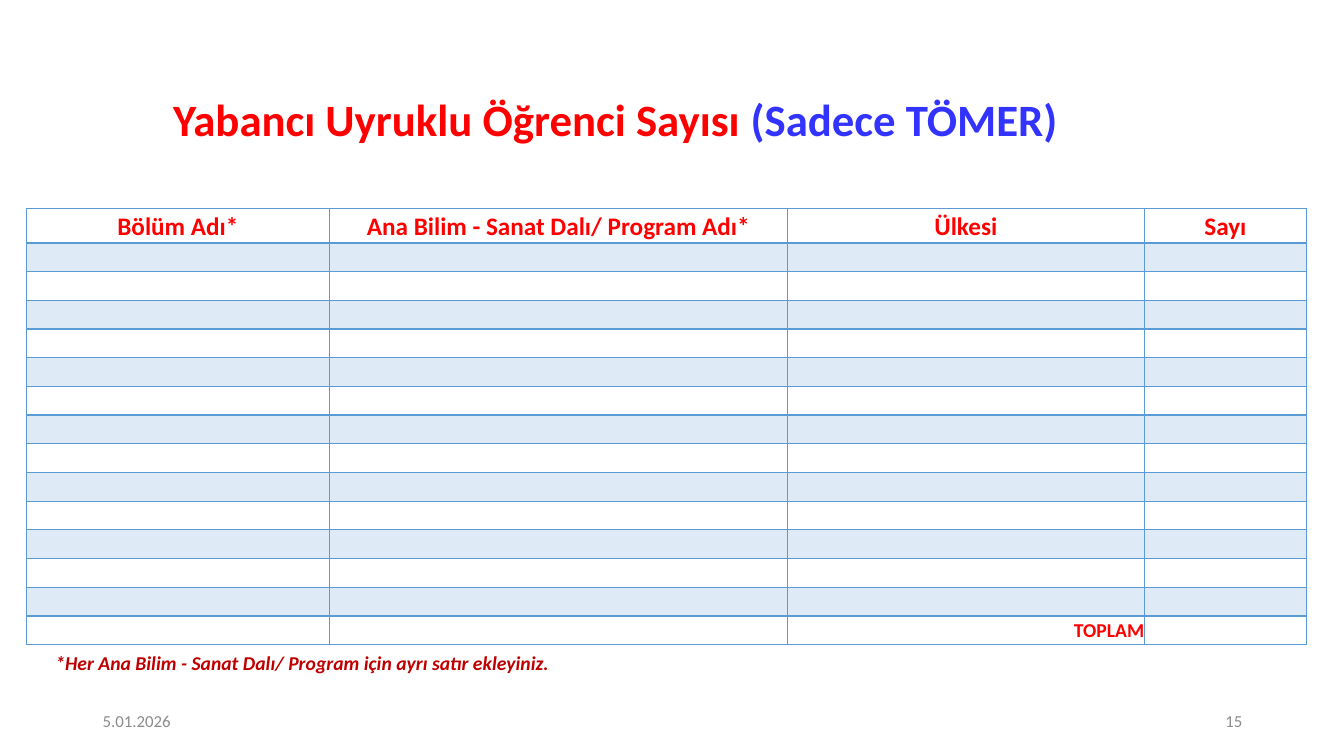
from lxml.etree import SubElement
from pptx import Presentation
from pptx.dml.color import RGBColor
from pptx.enum.text import MSO_ANCHOR, MSO_AUTO_SIZE, PP_ALIGN
from pptx.oxml.ns import qn
from pptx.util import Inches, Pt

WIDE, HIGH = 13.33, 7.5
RED, BLUE, GREY, DARK = "FF0000", "3333FF", "8C8C8C", "C00000"
EDGE, BAND = "5B9BD5", "DEEBF7"

TITLE = [("Yabancı Uyruklu Öğrenci Sayısı ", RED), ("(Sadece TÖMER) ", BLUE)]
HEADS = ["Bölüm Adı*", "Ana Bilim - Sanat Dalı/ Program Adı*", "Ülkesi", "Sayı"]
COLS = [3.01, 4.54, 3.54, 1.61]
ROWS = [0.34] + [0.285] * 14
TOTAL = "\u00a0TOPLAM"
NOTE = "*Her Ana Bilim - Sanat Dalı/ Program için ayrı satır ekleyiniz."
DATE, PAGE = "5.01.2026", "15"
LEFT, TOP = 0.26, 2.07
FOOT = (0.95 - 0.02) * HIGH


def color(code):
    return RGBColor.from_string(code)


def style(font, size, code, bold=False, italic=False):
    font.name, font.size = "Calibri", Pt(size)
    font.bold, font.italic = bold, italic
    font.color.rgb = color(code)


def label(slide, box, text, size, code, align=PP_ALIGN.LEFT,
          anchor=MSO_ANCHOR.MIDDLE, strong=False):
    frame = slide.shapes.add_textbox(*map(Inches, box)).text_frame
    frame.word_wrap = True
    frame.vertical_anchor = anchor
    par = frame.paragraphs[0]
    par.text, par.alignment = text, align
    style(par.font, size, code, strong, strong)


def border(cell, head):
    props = cell._tc.get_or_add_tcPr()
    for side in "LRTB":
        width = 2 if head and side == "B" else 1
        line = SubElement(props, qn(f"a:ln{side}"), w=str(Pt(width)))
        fill = SubElement(line, qn("a:solidFill"))
        SubElement(fill, qn("a:srgbClr"), val=EDGE)


def write(cell, text, size, align):
    cell.vertical_anchor = MSO_ANCHOR.MIDDLE
    cell.margin_left = cell.margin_right = 0
    cell.margin_top = cell.margin_bottom = 0
    par = cell.text_frame.paragraphs[0]
    par.text, par.alignment, par.line_spacing = text, align, 1.07
    style(par.font, size, RED, True)


def heading(slide):
    title = slide.shapes.title
    title.left, title.top, title.width, title.height = map(
        Inches, (0.52, 0.93, 11.27, 0.56))
    frame = title.text_frame
    frame.auto_size = MSO_AUTO_SIZE.NONE
    frame.word_wrap = True
    frame.vertical_anchor = MSO_ANCHOR.MIDDLE
    par = frame.paragraphs[0]
    par.alignment, par.line_spacing = PP_ALIGN.CENTER, 0.9
    for text, code in TITLE:
        run = par.add_run()
        run.text = text
        style(run.font, 32, code, True)


def grid(slide):
    table = slide.shapes.add_table(
        len(ROWS), len(COLS), Inches(LEFT), Inches(TOP),
        Inches(sum(COLS)), Inches(sum(ROWS))).table
    table.first_row = table.horz_banding = False
    for col, width in zip(table.columns, COLS):
        col.width = Inches(width)
    for r, high in enumerate(ROWS):
        table.rows[r].height = Inches(high)
        for c, head in enumerate(HEADS):
            cell = table.cell(r, c)
            border(cell, r == 0)
            if r % 2:
                cell.fill.solid()
                cell.fill.fore_color.rgb = color(BAND)
            else:
                cell.fill.background()
            if r == 0:
                write(cell, head, 18, PP_ALIGN.CENTER)
            else:
                last = r == len(ROWS) - 1 and c == 2
                write(cell, TOTAL if last else "", 14, PP_ALIGN.RIGHT)


def main():
    deck = Presentation()
    deck.slide_width, deck.slide_height = Inches(WIDE), Inches(HIGH)
    slide = deck.slides.add_slide(deck.slide_layouts[5])
    heading(slide)
    label(slide, (0.92, FOOT - 0.02, 3, 0.4), DATE, 12, GREY)
    label(slide, (9.42, FOOT - 0.02, 3, 0.4), PAGE, 12, GREY, PP_ALIGN.RIGHT)
    grid(slide)
    label(slide, (0.45, 6.41, 6.37, 0.34), NOTE, 14, DARK,
          anchor=MSO_ANCHOR.TOP, strong=True)
    deck.save("out.pptx")


if __name__ == "__main__":
    main()
